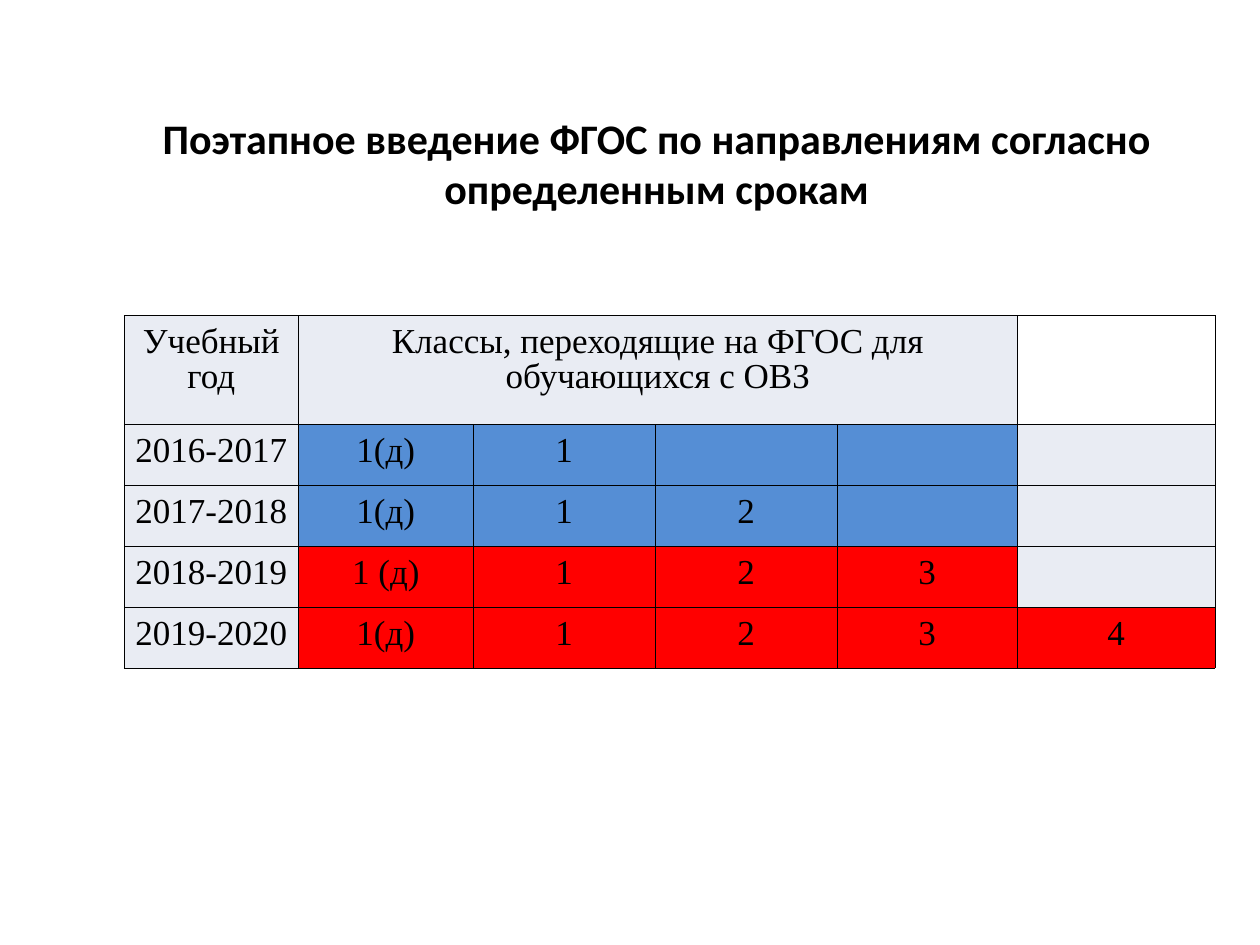
from lxml.etree import SubElement
from pptx import Presentation
from pptx.dml.color import RGBColor
from pptx.enum.text import MSO_ANCHOR, PP_ALIGN
from pptx.oxml.ns import qn
from pptx.util import Pt

BLACK, PALE, BLUE, RED = "000000", "E9ECF3", "558ED5", "FF0000"
COL_WIDTHS = [99.75, 99.75, 104, 104, 103, 113]
HEADER_HEIGHT, ROW_HEIGHT = 62.4, 34.8
HEADER = ["Учебный год", "Классы, переходящие на ФГОС для обучающихся с ОВЗ", "", "", "", ""]
YEARS = [
    (["2016-2017", "1(д)", "1", "", "", ""], [PALE] + [BLUE] * 4 + [PALE]),
    (["2017-2018", "1(д)", "1", "2", "", ""], [PALE] + [BLUE] * 4 + [PALE]),
    (["2018-2019", "1 (д)", "1", "2", "3", ""], [PALE] + [RED] * 4 + [PALE]),
    (["2019-2020", "1(д)", "1", "2", "3", "4"], [PALE] + [RED] * 5),
]


def rgb(value):
    return RGBColor.from_string(value)


def format_text(tf, text, font, size, bold=False):
    tf.text = text
    p = tf.paragraphs[0]
    p.alignment = PP_ALIGN.CENTER
    for r in p.runs:
        r.font.name = font
        r.font.size = Pt(size)
        r.font.bold = bold
        r.font.color.rgb = rgb(BLACK)
    return p


def add_borders(cell, width=0.25):
    """Draw all four sides; call before setting the fill, which must follow in the XML."""
    tc_pr = cell._tc.get_or_add_tcPr()
    for side in ("a:lnL", "a:lnR", "a:lnT", "a:lnB"):
        ln = SubElement(tc_pr, qn(side), w=str(Pt(width)))
        fill = SubElement(ln, qn("a:solidFill"))
        SubElement(fill, qn("a:srgbClr"), val=BLACK)


def format_cell(cell, text, color):
    add_borders(cell)
    if color:
        cell.fill.solid()
        cell.fill.fore_color.rgb = rgb(color)
    else:
        cell.fill.background()
    cell.margin_left = cell.margin_right = Pt(5)
    cell.margin_top, cell.margin_bottom = Pt(5.75), Pt(3.6)
    p = format_text(cell.text_frame, text, "Times New Roman", 20)
    p.line_spacing = 0.9


def add_title(slide, left, top, width, height):
    tf = slide.shapes.add_textbox(Pt(left), Pt(top), Pt(width), Pt(height)).text_frame
    tf.word_wrap = True
    tf.vertical_anchor = MSO_ANCHOR.TOP
    format_text(tf, "Поэтапное введение ФГОС по направлениям согласно определенным срокам",
                "Calibri", 24, bold=True)


def add_schedule(slide, left, top, width, height):
    rows = [(HEADER, [PALE] * 5 + [None])] + YEARS
    table = slide.shapes.add_table(len(rows), len(COL_WIDTHS), Pt(left), Pt(top),
                                   Pt(width), Pt(height)).table
    table.first_row = table.horz_banding = False
    for column, col_width in zip(table.columns, COL_WIDTHS):
        column.width = Pt(col_width)
    for i, (texts, colors) in enumerate(rows):
        table.rows[i].height = Pt(ROW_HEIGHT if i else HEADER_HEIGHT)
        for cell, text, color in zip(table.rows[i].cells, texts, colors):
            format_cell(cell, text, color)
    table.cell(0, 1).merge(table.cell(0, 4))


def main():
    prs = Presentation()
    prs.slide_width, prs.slide_height = Pt(720), Pt(540)
    slide = prs.slides.add_slide(prs.slide_layouts[6])
    add_schedule(slide, 70.9, 180.2, sum(COL_WIDTHS), HEADER_HEIGHT + len(YEARS) * ROW_HEIGHT)
    add_title(slide, 67.5, 60.5, 615.5, 54.7)
    prs.save("out.pptx")


if __name__ == "__main__":
    main()
